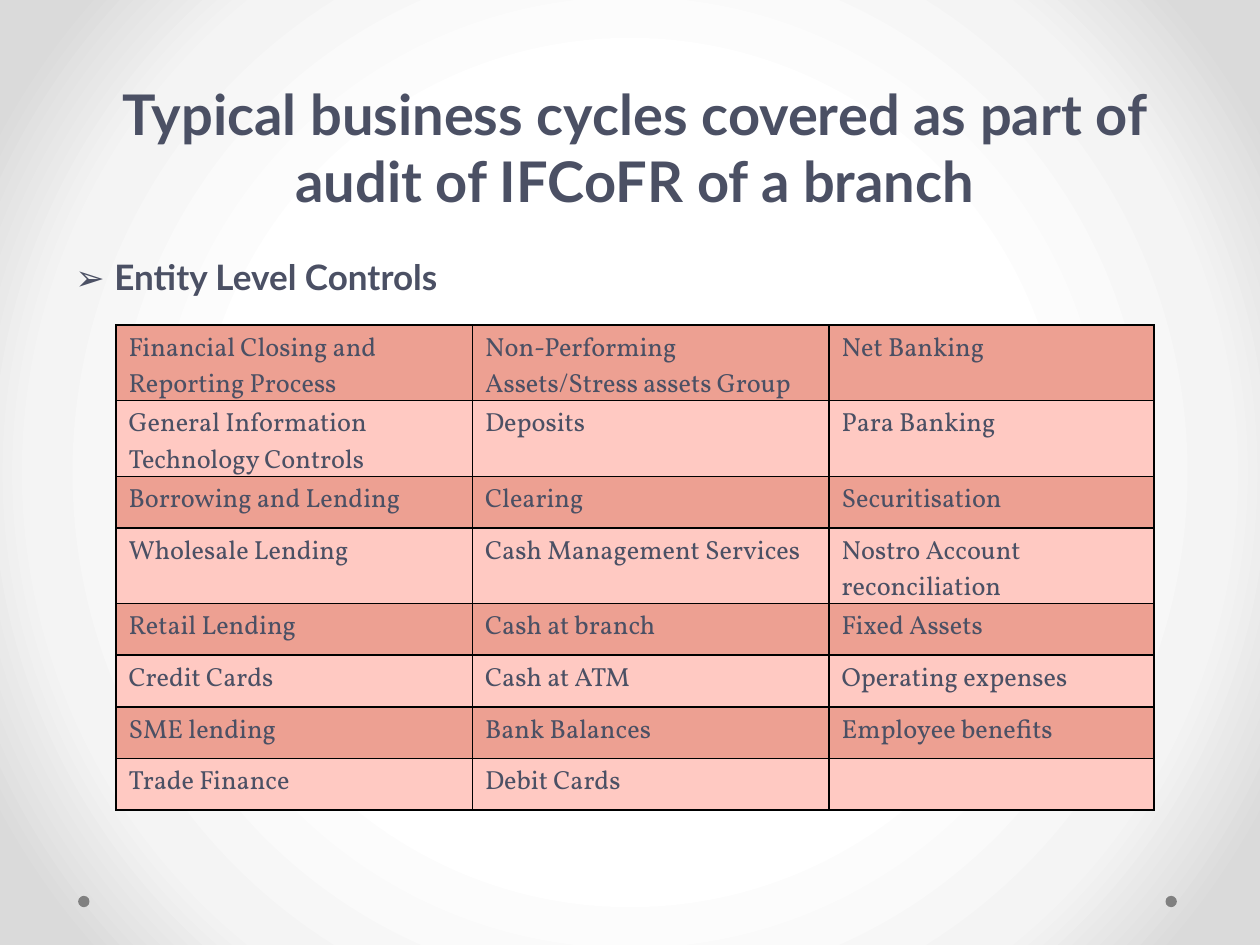
from dataclasses import dataclass

from lxml import etree
from pptx import Presentation
from pptx.dml.color import RGBColor
from pptx.enum import shapes, text
from pptx.oxml import parse_xml
from pptx.oxml.ns import qn
from pptx.util import Inches, Pt

NS = 'xmlns:a="http://schemas.openxmlformats.org/drawingml/2006/main"'


@dataclass(frozen=True)
class Theme:
    ink: str = "4B5064"
    dot: str = "808080"
    edge: str = "000000"
    bands: tuple = ("EDA092", "FFC9C2")
    glow: tuple = ((50, "FFFFFF"), (76, "F4F4F4"), (92, "DADADA"))
    head: str = "Lato"
    body: str = "Vollkorn"
    title: int = 32
    point: int = 20
    cell: int = 15


@dataclass(frozen=True)
class Row:
    cells: tuple
    high: float = 0.41


T = Theme()
TALL = 0.6
ROWS = (
    Row(("Financial Closing and Reporting Process",
         "Non-Performing Assets/Stress assets Group", "Net Banking"), TALL),
    Row(("General Information Technology Controls", "Deposits", "Para Banking"), TALL),
    Row(("Borrowing and Lending", "Clearing", "Securitisation")),
    Row(("Wholesale Lending", "Cash Management Services",
         "Nostro Account reconciliation"), TALL),
    Row(("Retail Lending", "Cash at branch", "Fixed Assets")),
    Row(("Credit Cards", "Cash at ATM", "Operating expenses")),
    Row(("SME lending", "Bank Balances", "Employee benefits")),
    Row(("Trade Finance", "Debit Cards", "")),
)
COLS = (2.83, 2.83, 2.58)


def write(para, words: str, *, font: str, size: int, bold: bool = False,
          align=text.PP_ALIGN.LEFT, before: float = 0) -> None:
    para.alignment = align
    para.space_before = Pt(before)
    para.font.size = Pt(size)
    if words:
        run = para.add_run()
        run.text = words
        run.font.name = font
        run.font.size = Pt(size)
        run.font.bold = bold
        run.font.color.rgb = RGBColor.from_string(T.ink)


def bullet(para, sign: str, indent: float) -> None:
    props = para._p.get_or_add_pPr()
    props.set("marL", str(Inches(indent)))
    props.set("indent", str(-Inches(indent)))
    mark = etree.Element(qn("a:buFont"), typeface=T.head)
    sign_el = etree.Element(qn("a:buChar"), char=sign)
    rest = props.find(qn("a:defRPr"))
    for part in (mark, sign_el):
        if rest is None:
            props.append(part)
        else:
            rest.addprevious(part)


def glow(slide) -> None:
    slide.background.fill.gradient()
    grad = slide.element.find(".//" + qn("a:gradFill"))
    stops = "".join(f'<a:gs pos="{pos * 1000}"><a:srgbClr val="{hue}"/></a:gs>'
                    for pos, hue in T.glow)
    grad.getparent().replace(grad, parse_xml(
        f'<a:gradFill {NS} rotWithShape="1"><a:gsLst>{stops}</a:gsLst>'
        '<a:path path="circle"><a:fillToRect l="50000" t="50000" r="50000" b="50000"/>'
        '</a:path></a:gradFill>'))


def dot(slide, left: float) -> None:
    mark = slide.shapes.add_shape(shapes.MSO_SHAPE.OVAL, Inches(left), Inches(7.11),
                                  Inches(0.09), Inches(0.09))
    mark.shadow.inherit = False
    mark.fill.solid()
    mark.fill.fore_color.rgb = RGBColor.from_string(T.dot)
    mark.line.fill.background()


def border(cell) -> None:
    props = cell._tc.get_or_add_tcPr()
    for spot, side in enumerate("LRTB"):
        props.insert(spot, parse_xml(
            f'<a:ln{side} {NS} w="{Pt(1)}"><a:solidFill>'
            f'<a:srgbClr val="{T.edge}"/></a:solidFill></a:ln{side}>'))


def grid(slide, left: float, top: float) -> None:
    table = slide.shapes.add_table(
        len(ROWS), len(COLS), Inches(left), Inches(top), Inches(sum(COLS)),
        Inches(sum(row.high for row in ROWS))).table
    table.first_row = table.horz_banding = False
    for col, wide in zip(table.columns, COLS):
        col.width = Inches(wide)
    for r, row in enumerate(ROWS):
        table.rows[r].height = Inches(row.high)
        for c, words in enumerate(row.cells):
            cell = table.cell(r, c)
            cell.margin_top, cell.margin_bottom = Inches(0.05), Inches(-0.03)
            cell.fill.solid()
            cell.fill.fore_color.rgb = RGBColor.from_string(T.bands[r % 2])
            border(cell)
            write(cell.text_frame.paragraphs[0], words, font=T.body, size=T.cell)


def main() -> None:
    deck = Presentation()
    deck.slide_width, deck.slide_height = Inches(10), Inches(7.5)
    slide = deck.slides.add_slide(deck.slide_layouts[6])

    # Backdrop and footer dots
    glow(slide)
    for left in (9.25, 0.62):
        dot(slide, left)

    # Title and lead point
    frame = slide.shapes.add_textbox(Inches(0.5), Inches(0.58),
                                     Inches(9.08), Inches(1.85)).text_frame
    frame.word_wrap = True
    write(frame.paragraphs[0],
          "Typical business cycles covered as part of audit of IFCoFR of a branch",
          font=T.head, size=T.title, bold=True, align=text.PP_ALIGN.CENTER)
    lead = frame.add_paragraph()
    write(lead, "Entity Level Controls", font=T.head, size=T.point, bold=True, before=24)
    bullet(lead, "➢", 0.31)

    # Business cycles
    grid(slide, 0.92, 2.58)
    deck.save("out.pptx")


if __name__ == "__main__":
    main()
